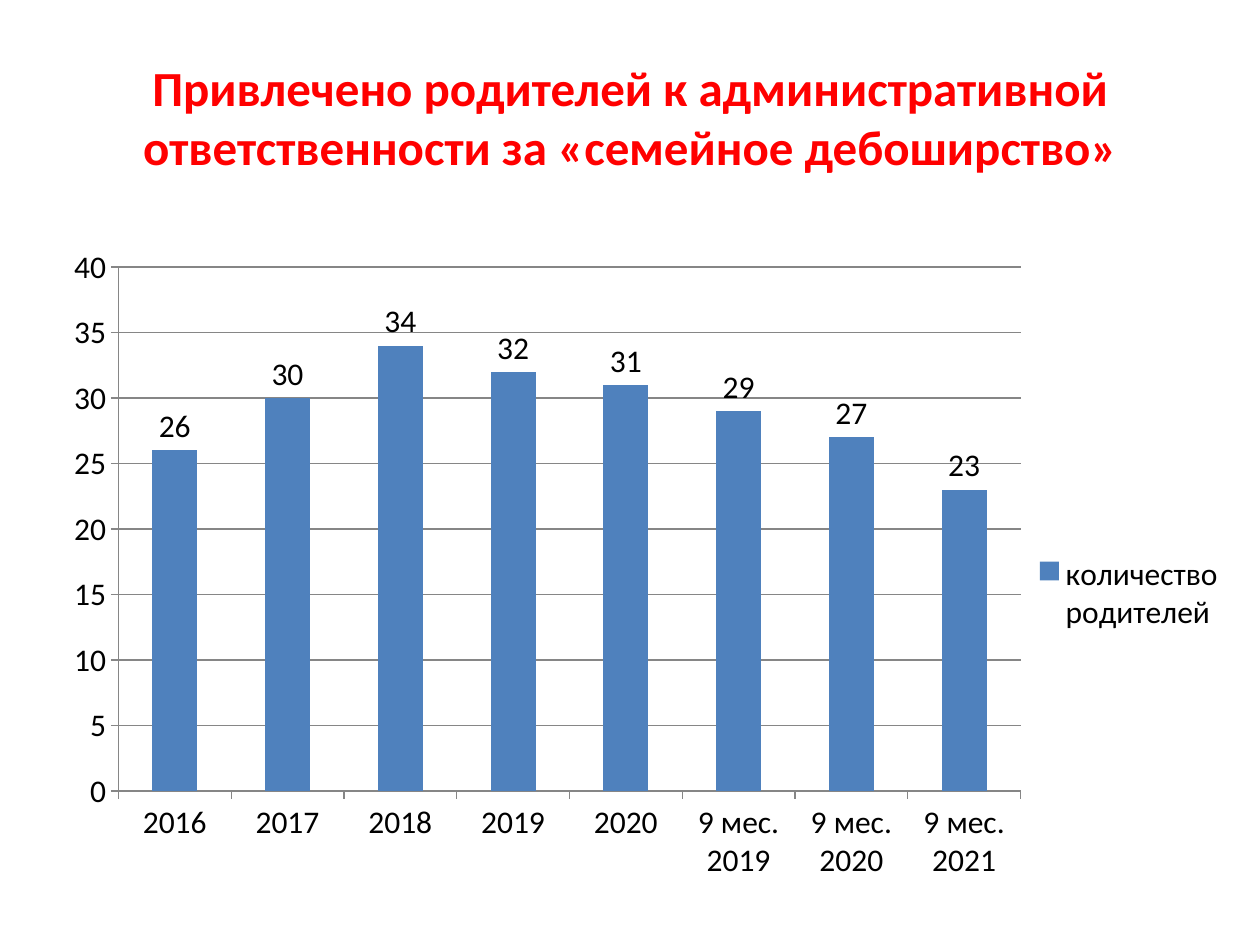
import pptx
import pptx.chart.data
import pptx.dml.color
import pptx.enum.chart
import pptx.enum.text
import pptx.oxml
import pptx.oxml.ns
import pptx.util
from pptx.util import Inches


def rgb(value):
    return pptx.dml.color.RGBColor.from_string(value)


def set_layout(parent, index, target, left, top, width, height):
    for old in parent.xpath("c:layout"):
        parent.remove(old)
    values = {"x": (left - chart_left) / chart_width, "y": (top - chart_top) / chart_height,
              "w": width / chart_width, "h": height / chart_height}
    parts = [f'<c:{axis}Mode val="edge"/>' for axis in "xy"]
    parts += [f'<c:{key} val="{value:.4f}"/>' for key, value in values.items()]
    parent.insert(index, pptx.oxml.parse_xml(
        f'<c:layout {pptx.oxml.ns.nsdecls("c")}><c:manualLayout>'
        f'{target}{"".join(parts)}</c:manualLayout></c:layout>'))


prs = pptx.Presentation()
prs.slide_width = Inches(10)
prs.slide_height = Inches(7.5)
s = prs.slides.add_slide(prs.slide_layouts[6])

sp = s.shapes.add_textbox(Inches(0.5), Inches(0.3), Inches(9), Inches(1.25))
tf = sp.text_frame
tf.word_wrap = True
tf.vertical_anchor = pptx.enum.text.MSO_ANCHOR.MIDDLE
p = tf.paragraphs[0]
p.alignment = pptx.enum.text.PP_ALIGN.CENTER
r = p.add_run()
r.text = "Привлечено родителей к административной ответственности за «семейное дебоширство»"

data = pptx.chart.data.CategoryChartData()
data.categories = ["2016", "2017", "2018", "2019", "2020",
                   "9 мес. 2019", "9 мес. 2020", "9 мес. 2021"]
data.add_series("количество родителей", [26, 30, 34, 32, 31, 29, 27, 23])
chart_left, chart_top, chart_width, chart_height = 0.39, 1.86, 9.61, 5.23
chart = s.shapes.add_chart(
    pptx.enum.chart.XL_CHART_TYPE.COLUMN_CLUSTERED,
    Inches(chart_left), Inches(chart_top),
    Inches(chart_width), Inches(chart_height), data).chart
chart.has_title = False

fonts = [
    (r.font, {"size": pptx.util.Pt(28), "name": "Calibri", "bold": True}, "FF0000"),
    (chart.font, {"size": pptx.util.Pt(18), "name": "Calibri"}, "000000"),
]
for font, values, color in fonts:
    for name, value in values.items():
        setattr(font, name, value)
    font.color.rgb = rgb(color)

chart.has_legend = True
chart.legend.position = pptx.enum.chart.XL_LEGEND_POSITION.RIGHT
chart.legend.include_in_layout = False
plot_area = chart.element.xpath("c:chart/c:plotArea")[0]
legend = chart.element.xpath("c:chart/c:legend")[0]
set_layout(plot_area, 0, '<c:layoutTarget val="inner"/>', 0.94, 2.12, 7.16, 4.16)
set_layout(legend, 1, "", 8.06, 4.35, 1.8, 0.72)

plot = chart.plots[0]
plot.gap_width = 150
plot.vary_by_categories = False
plot.has_data_labels = True
labels = plot.data_labels
labels.show_value = True
labels.position = pptx.enum.chart.XL_LABEL_POSITION.OUTSIDE_END
fill = plot.series[0].format.fill
fill.solid()
fill.fore_color.rgb = rgb("4F81BD")

axis_values = {"minimum_scale": 0, "maximum_scale": 40, "major_unit": 5,
               "has_major_gridlines": True}
for name, value in axis_values.items():
    setattr(chart.value_axis, name, value)
lines = [chart.category_axis.format.line, chart.value_axis.format.line,
         chart.value_axis.major_gridlines.format.line]
for line in lines:
    line.color.rgb = rgb("868686")
    line.width = pptx.util.Pt(0.75)
for axis in (chart.category_axis, chart.value_axis):
    axis.major_tick_mark = pptx.enum.chart.XL_TICK_MARK.OUTSIDE

prs.save("out.pptx")
